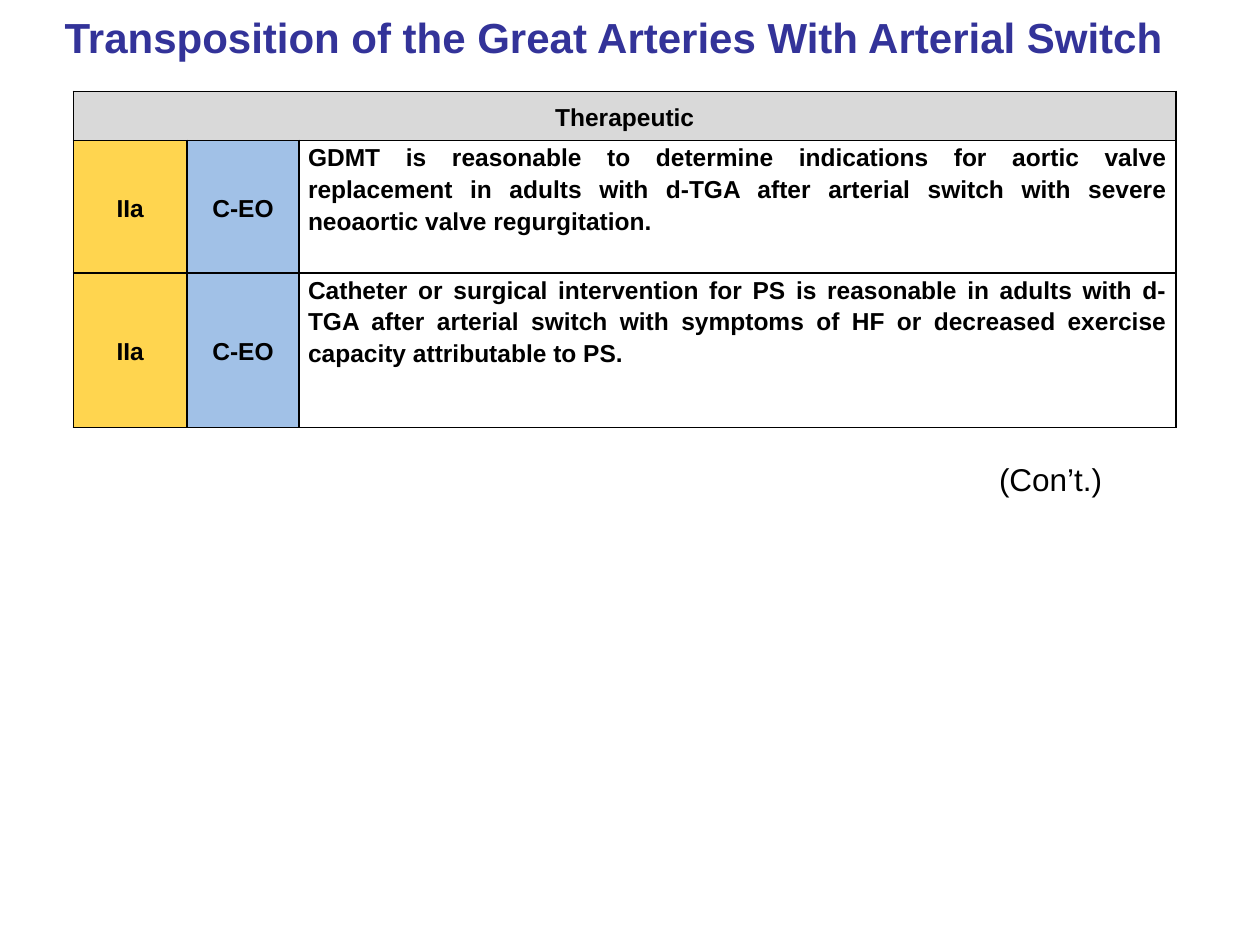
from dataclasses import dataclass

from lxml import etree
from pptx import Presentation
from pptx.dml.color import RGBColor
from pptx.enum.text import MSO_ANCHOR, MSO_AUTO_SIZE, PP_ALIGN
from pptx.oxml.ns import qn
from pptx.util import Cm, Pt

CENTER, JUSTIFY, LEFT = PP_ALIGN.CENTER, PP_ALIGN.JUSTIFY, PP_ALIGN.LEFT
TOP, MIDDLE = MSO_ANCHOR.TOP, MSO_ANCHOR.MIDDLE
GROW = MSO_AUTO_SIZE.SHAPE_TO_FIT_TEXT

COLORS = {
    "title": "333399",
    "text": "000000",
    "header": "D9D9D9",
    "class": "FFD54F",
    "level": "A1C1E7",
}
COLUMN_WIDTHS = (2.29, 2.26, 17.68)
ROW_HEIGHTS = (0.99, 2.67, 3.12)


@dataclass
class Recommendation:
    strength: str
    level: str
    advice: str


RECOMMENDATIONS = (
    Recommendation(
        "IIa", "C-EO",
        "GDMT is reasonable to determine indications for aortic valve replacement "
        "in adults with d-TGA after arterial switch with severe neoaortic valve "
        "regurgitation.",
    ),
    Recommendation(
        "IIa", "C-EO",
        "Catheter or surgical intervention for PS is reasonable in adults with "
        "d-TGA after arterial switch with symptoms of HF or decreased exercise "
        "capacity attributable to PS.",
    ),
)


def write(frame, text: str, size: int, bold: bool, color: str, align) -> None:
    frame.text = text
    para = frame.paragraphs[0]
    para.alignment = align
    font = para.runs[0].font
    font.name, font.size, font.bold = "Arial", Pt(size), bold
    font.color.rgb = RGBColor.from_string(COLORS[color])


def add_borders(cell) -> None:
    properties = cell._tc.get_or_add_tcPr()
    for side in ("lnL", "lnR", "lnT", "lnB"):
        line = etree.SubElement(properties, qn(f"a:{side}"), w=str(Pt(1)))
        fill = etree.SubElement(line, qn("a:solidFill"))
        etree.SubElement(fill, qn("a:srgbClr"), val=COLORS["text"])


def fill_cell(cell, text: str, color: str = "", align=CENTER, anchor=MIDDLE) -> None:
    write(cell.text_frame, text, 14, True, "text", align)
    cell.text_frame.paragraphs[0].line_spacing = 1.15
    cell.vertical_anchor = anchor
    cell.margin_left = cell.margin_right = Cm(0.18)
    cell.margin_top = cell.margin_bottom = 0
    if color:
        cell.fill.solid()
        cell.fill.fore_color.rgb = RGBColor.from_string(COLORS[color])
    else:
        cell.fill.background()


def add_recommendations(page) -> None:
    frame = page.shapes.add_table(
        len(ROW_HEIGHTS), len(COLUMN_WIDTHS), Cm(1.48), Cm(1.84),
        Cm(sum(COLUMN_WIDTHS)), Cm(sum(ROW_HEIGHTS)),
    )
    table = frame.table
    table.first_row = table.horz_banding = False
    for column, width in zip(table.columns, COLUMN_WIDTHS):
        column.width = Cm(width)
    for row, height in zip(table.rows, ROW_HEIGHTS):
        row.height = Cm(height)
    for cell in table.iter_cells():
        add_borders(cell)

    table.cell(0, 0).merge(table.cell(0, 2))
    fill_cell(table.cell(0, 0), "Therapeutic", "header")
    for index, item in enumerate(RECOMMENDATIONS, start=1):
        fill_cell(table.cell(index, 0), item.strength, "class")
        fill_cell(table.cell(index, 1), item.level, "level")
        fill_cell(table.cell(index, 2), item.advice, align=JUSTIFY, anchor=TOP)


def main() -> None:
    deck = Presentation()
    deck.slide_width, deck.slide_height = Cm(25.4), Cm(19.05)
    page = deck.slides.add_slide(deck.slide_layouts[5])

    title = page.shapes.title
    title.left, title.top, title.width, title.height = Cm(0.94), Cm(0.1), Cm(22.86), Cm(1.27)
    write(title.text_frame, "Transposition of the Great Arteries With Arterial Switch",
          24, True, "title", CENTER)
    title.text_frame.vertical_anchor = MIDDLE

    add_recommendations(page)

    note = page.shapes.add_textbox(Cm(19.89), Cm(9.14), Cm(2.97), Cm(1.02))
    write(note.text_frame, "(Con’t.)", 18, False, "text", LEFT)
    note.text_frame.word_wrap = True
    note.text_frame.auto_size = GROW

    deck.save("out.pptx")


if __name__ == "__main__":
    main()
